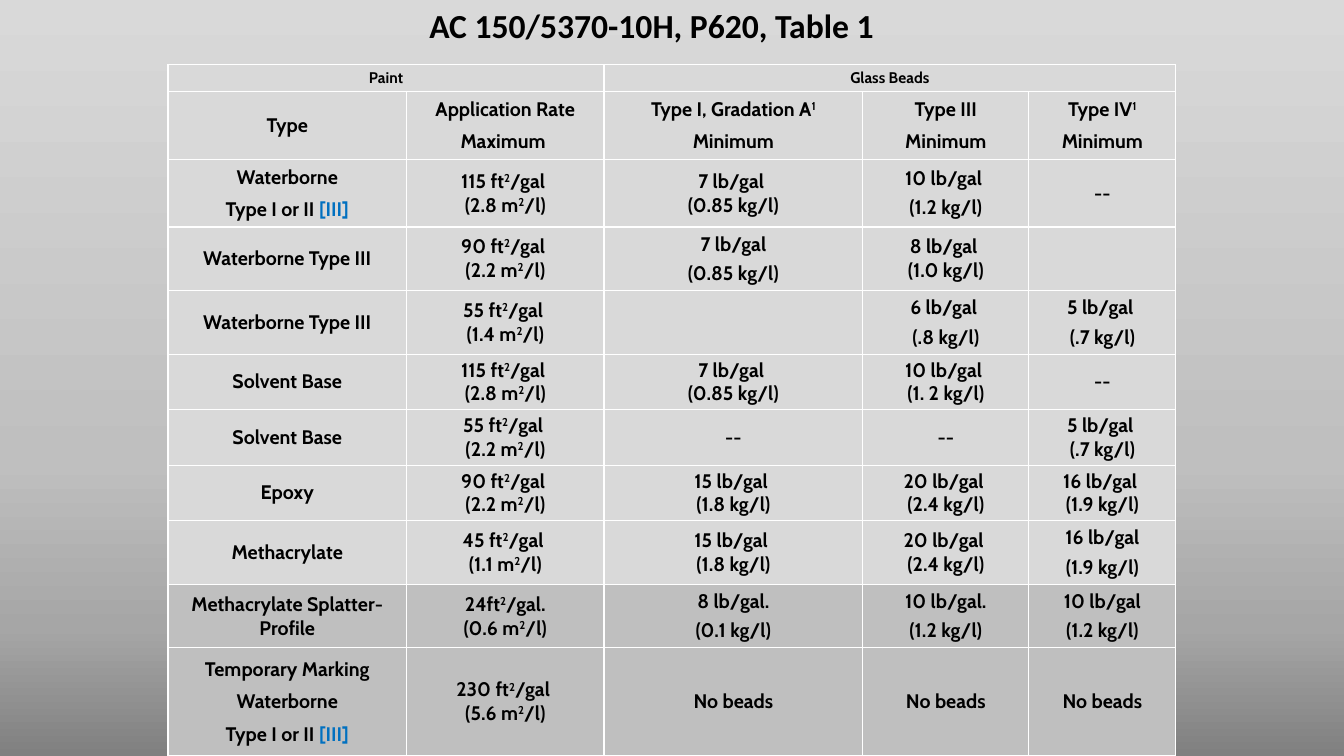
from typing import NamedTuple

import pptx
import pptx.dml.color
import pptx.enum.text
import pptx.oxml
import pptx.oxml.ns
import pptx.slide
import pptx.table
import pptx.text.text
import pptx.util

RGBColor = pptx.dml.color.RGBColor
BLACK = RGBColor(0x00, 0x00, 0x00)
WHITE = RGBColor(0xFF, 0xFF, 0xFF)
BLUE = RGBColor(0x00, 0x70, 0xC0)
LIGHT = RGBColor(0xD9, 0xD9, 0xD9)
SHADE = RGBColor(0xBF, 0xBF, 0xBF)
MID = RGBColor(0xA6, 0xA6, 0xA6)
DARK = RGBColor(0x80, 0x80, 0x80)

WIDE = pptx.util.Inches(13.33)
HIGH = pptx.util.Inches(7.5)
LINK = "[III]"
STOPS = ((0, LIGHT), (61, SHADE), (83, MID), (100, DARK))
COLS = (2.37, 1.96, 2.57, 1.65, 1.46)
CENTER = pptx.enum.text.PP_ALIGN.CENTER


class Box(NamedTuple):
    left: float
    top: float
    wide: float
    high: float

    def place(self) -> tuple[int, int, int, int]:
        return (int(WIDE * self.left / 100), int(HIGH * self.top / 100),
                int(WIDE * self.wide / 100), int(HIGH * self.high / 100))


class Row(NamedTuple):
    high: float
    cells: tuple[str, ...]
    fill: RGBColor = LIGHT
    size: int = 14
    head: bool = False


TITLE = Box(31.06, 0, 35.41, 6.67)
GRID = Box(12.5, 8.53, 75, 91.47)


def rate(feet: str, metric: str) -> str:
    return f"{feet} ft^2/gal \n({metric} m^2/l)"


# "|" parts paragraphs, "^" lifts the next character
ROWS = (
    Row(0.27, ("Paint", "", "Glass Beads", "", ""), size=11, head=True),
    Row(0.67, ("Type", "Application Rate|Maximum ", "Type I, Gradation A^1|Minimum",
               "Type III|Minimum", "Type IV^1|Minimum"), head=True),
    Row(0.67, ("Waterborne|Type I or II [III]", rate("115", "2.8"),
               "7 lb/gal \n(0.85 kg/l)", "10 lb/gal |(1.2 kg/l)", "--")),
    Row(0.63, ("Waterborne Type III", rate("90", "2.2"),
               "7 lb/gal|(0.85 kg/l)", "8 lb/gal \n(1.0 kg/l)", "")),
    Row(0.63, ("Waterborne Type III", rate("55", "1.4"),
               "", "6 lb/gal |(.8 kg/l)", "5 lb/gal |(.7 kg/l)")),
    Row(0.55, ("Solvent Base", rate("115", "2.8"),
               "7 lb/gal \n(0.85 kg/l)", "10 lb/gal \n(1. 2 kg/l)", "--")),
    Row(0.55, ("Solvent Base", rate("55", "2.2"), "--", "--", "5 lb/gal \n(.7 kg/l)")),
    Row(0.55, ("Epoxy", rate("90", "2.2"), "15 lb/gal \n(1.8 kg/l)",
               "20 lb/gal \n(2.4 kg/l)", "16 lb/gal \n(1.9 kg/l)")),
    Row(0.63, ("Methacrylate", rate("45", "1.1"), "15 lb/gal \n(1.8 kg/l)",
               "20 lb/gal \n(2.4 kg/l)", "16 lb/gal|(1.9 kg/l)")),
    Row(0.63, ("Methacrylate Splatter-Profile", "24ft^2/gal.\n(0.6 m^2/l)",
               "8 lb/gal.|(0.1 kg/l)", "10 lb/gal.|(1.2 kg/l)", "10 lb/gal|(1.2 kg/l)"), SHADE),
    Row(1.07, ("Temporary Marking|Waterborne|Type I or II [III]", rate("230", "5.6"),
               "No beads", "No beads", "No beads"), SHADE),
)


def set_font(para: pptx.text.text._Paragraph, face: str, size: int) -> None:
    para.alignment = CENTER
    para.font.name = face
    para.font.size = pptx.util.Pt(size)
    para.font.bold = True


def add_run(para: pptx.text.text._Paragraph, text: str, color: RGBColor = BLACK,
            lift: bool = False) -> None:
    if not text:
        return
    run = para.add_run()
    run.text = text
    run.font.color.rgb = color
    if lift:
        run._r.get_or_add_rPr().set("baseline", "30000")


def write_line(para: pptx.text.text._Paragraph, line: str) -> None:
    body, link, _ = line.partition(LINK)
    first, *rest = body.split("^")
    add_run(para, first)
    for part in rest:
        add_run(para, part[0], lift=True)
        add_run(para, part[1:])
    add_run(para, link, BLUE)


def write_cell(cell: pptx.table._Cell, text: str, size: int, gap: int) -> None:
    parts = text.split("|")
    for at, part in enumerate(parts):
        para = cell.text_frame.paragraphs[0] if at == 0 else cell.text_frame.add_paragraph()
        set_font(para, "Cabin", size)
        para.space_before = pptx.util.Pt(gap if at else 0)
        para.space_after = pptx.util.Pt(gap if at < len(parts) - 1 else 0)
        for turn, line in enumerate(part.split("\n")):
            if turn:
                para.add_line_break()
            write_line(para, line)


def style_cell(cell: pptx.table._Cell, fill: RGBColor) -> None:
    cell.fill.solid()
    cell.fill.fore_color.rgb = fill
    cell.vertical_anchor = pptx.enum.text.MSO_ANCHOR.MIDDLE
    cell.margin_left = cell.margin_right = pptx.util.Inches(0.03)
    cell.margin_top = cell.margin_bottom = 0
    props = cell._tc.get_or_add_tcPr()
    for at, side in enumerate("LRTB"):
        props.insert(at, pptx.oxml.parse_xml(
            f'<a:ln{side} {pptx.oxml.ns.nsdecls("a")} w="12700"><a:solidFill>'
            f'<a:srgbClr val="{WHITE}"/></a:solidFill></a:ln{side}>'))


def paint_back(slide: pptx.slide.Slide) -> None:
    slide.background.fill.gradient()
    grad = slide.element.find(".//" + pptx.oxml.ns.qn("a:gradFill"))
    for child in list(grad):
        grad.remove(child)
    stops = "".join(f'<a:gs pos="{at * 1000}"><a:srgbClr val="{color}"/></a:gs>'
                    for at, color in STOPS)
    space = pptx.oxml.ns.nsdecls("a")
    grad.append(pptx.oxml.parse_xml(f"<a:gsLst {space}>{stops}</a:gsLst>"))
    grad.append(pptx.oxml.parse_xml(f'<a:lin {space} ang="5400000" scaled="0"/>'))


def add_title(slide: pptx.slide.Slide) -> None:
    frame = slide.shapes.add_textbox(*TITLE.place()).text_frame
    frame.word_wrap = False
    frame.auto_size = pptx.enum.text.MSO_AUTO_SIZE.SHAPE_TO_FIT_TEXT
    para = frame.paragraphs[0]
    set_font(para, "Calibri", 24)
    add_run(para, "AC 150/5370-10H, P620, Table 1 ")


def add_grid(slide: pptx.slide.Slide) -> None:
    place = GRID.place()
    table = slide.shapes.add_table(len(ROWS), len(COLS), *place).table
    table.first_row = table.horz_banding = False
    for col, share in zip(table.columns, COLS):
        col.width = int(place[2] * share / sum(COLS))
    total = sum(row.high for row in ROWS)
    for y, row in enumerate(ROWS):
        table.rows[y].height = int(place[3] * row.high / total)
        for x, text in enumerate(row.cells):
            cell = table.cell(y, x)
            style_cell(cell, row.fill)
            write_cell(cell, text, row.size, 3 if row.head or x == 0 else 2)
    table.cell(0, 0).merge(table.cell(0, 1))
    table.cell(0, 2).merge(table.cell(0, 4))


def main() -> None:
    deck = pptx.Presentation()
    deck.slide_width, deck.slide_height = WIDE, HIGH
    slide = deck.slides.add_slide(deck.slide_layouts[6])
    paint_back(slide)
    add_title(slide)
    add_grid(slide)
    deck.save("out.pptx")


if __name__ == "__main__":
    main()
